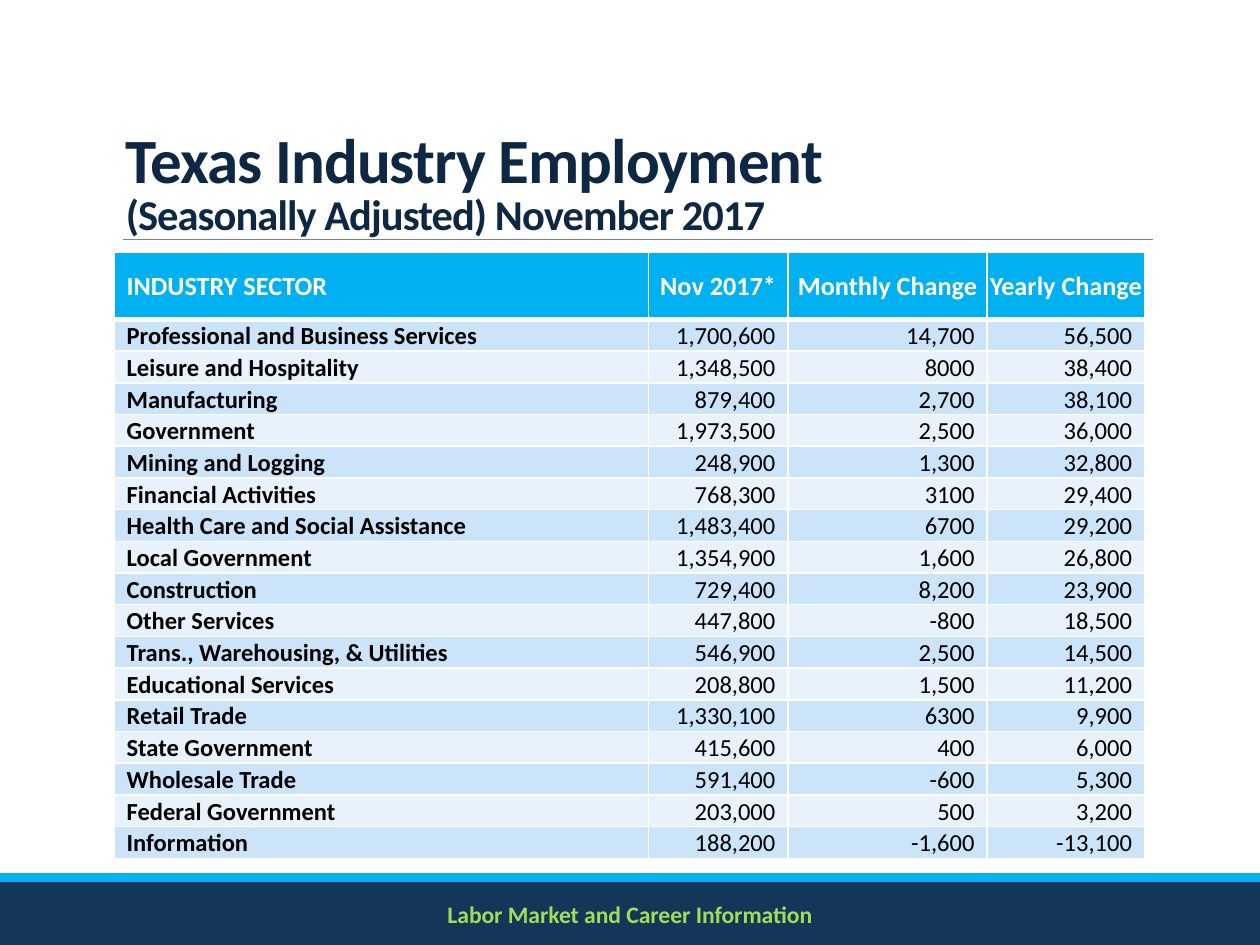
from dataclasses import dataclass
from typing import NamedTuple

from lxml.etree import SubElement
from pptx import Presentation
from pptx.dml.color import RGBColor
from pptx.enum.shapes import MSO_CONNECTOR, MSO_SHAPE
from pptx.enum.text import MSO_ANCHOR, PP_ALIGN
from pptx.oxml.ns import qn
from pptx.util import Inches, Pt


@dataclass(frozen=True)
class Theme:
    font: str = "Calibri"
    navy: str = "133659"
    cyan: str = "00B0F0"
    rule: str = "808080"
    footer: str = "9FDF58"
    title: str = "0E2843"
    white: str = "FFFFFF"
    black: str = "000000"
    bands: tuple[str, str] = ("CCE4F9", "E7F2FC")
    title_size: float = 36
    subtitle_size: float = 24.3
    header_size: float = 15
    body_size: float = 14
    footer_size: float = 13.5


class Box(NamedTuple):
    column: float
    row: float
    columns: float
    rows: float


class Sector(NamedTuple):
    name: str
    employment: str
    monthly: str
    yearly: str


class CellStyle(NamedTuple):
    size: float
    color: str
    bold: bool
    fill: str
    align: PP_ALIGN
    anchor: MSO_ANCHOR
    left: float
    right: float
    top_border: float
    bottom_border: float


THEME = Theme()
GRID_COLUMNS, GRID_ROWS = 100, 75
SLIDE_WIDTH, SLIDE_HEIGHT = Inches(10), Inches(7.5)
TABLE_BOX = Box(9.05, 20.05, 81.8, 48.1)
COLUMN_WIDTHS = (42.4, 11.1, 15.8, 12.5)
HEADER_ROWS = 5.3
HEADINGS = Sector("INDUSTRY SECTOR", "Nov 2017*", "Monthly Change", "Yearly Change")
SECTORS = (
    Sector("Professional and Business Services", "1,700,600", "14,700", "56,500"),
    Sector("Leisure and Hospitality", "1,348,500", "8000", "38,400"),
    Sector("Manufacturing", "879,400", "2,700", "38,100"),
    Sector("Government", "1,973,500", "2,500", "36,000"),
    Sector("Mining and Logging", "248,900", "1,300", "32,800"),
    Sector("Financial Activities", "768,300", "3100", "29,400"),
    Sector("Health Care and Social Assistance", "1,483,400", "6700", "29,200"),
    Sector("Local Government", "1,354,900", "1,600", "26,800"),
    Sector("Construction", "729,400", "8,200", "23,900"),
    Sector("Other Services", "447,800", "-800", "18,500"),
    Sector("Trans., Warehousing, & Utilities", "546,900", "2,500", "14,500"),
    Sector("Educational Services", "208,800", "1,500", "11,200"),
    Sector("Retail Trade", "1,330,100", "6300", "9,900"),
    Sector("State Government", "415,600", "400", "6,000"),
    Sector("Wholesale Trade", "591,400", "-600", "5,300"),
    Sector("Federal Government", "203,000", "500", "3,200"),
    Sector("Information", "188,200", "-1,600", "-13,100"),
)


def across(columns: float) -> int:
    return round(SLIDE_WIDTH * columns / GRID_COLUMNS)


def down(rows: float) -> int:
    return round(SLIDE_HEIGHT * rows / GRID_ROWS)


def place(box: Box) -> tuple[int, int, int, int]:
    return across(box.column), down(box.row), across(box.columns), down(box.rows)


def format_run(run, size: float, color: str, bold: bool = True) -> None:
    run.font.name = THEME.font
    run.font.size = Pt(size)
    run.font.bold = bold
    run.font.color.rgb = RGBColor.from_string(color)


def add_band(slide, box: Box, color: str) -> None:
    band = slide.shapes.add_shape(MSO_SHAPE.RECTANGLE, *place(box))
    band.shadow.inherit = False
    band.fill.solid()
    band.fill.fore_color.rgb = RGBColor.from_string(color)
    band.line.fill.background()


def add_rule(slide, start: float, end: float, row: float) -> None:
    rule = slide.shapes.add_connector(
        MSO_CONNECTOR.STRAIGHT, across(start), down(row), across(end), down(row))
    rule.line.color.rgb = RGBColor.from_string(THEME.rule)
    rule.line.width = Pt(0.5)
    SubElement(rule._element.spPr, qn("a:effectLst"))


def add_text(slide, box: Box, text: str, sizes: tuple[float, ...], color: str,
             align: PP_ALIGN, spacing: float = 1, tracking: float = 0) -> None:
    frame = slide.shapes.add_textbox(*place(box)).text_frame
    frame.word_wrap = True
    frame.vertical_anchor = MSO_ANCHOR.MIDDLE
    paragraph = frame.paragraphs[0]
    paragraph.text = text
    paragraph.alignment = align
    paragraph.line_spacing = spacing
    for run, size in zip(paragraph.runs, sizes):
        format_run(run, size, color)
        run._r.get_or_add_rPr().set("spc", str(round(tracking * 100)))


def add_border(cell, side: str, width: float) -> None:
    border = SubElement(cell._tc.get_or_add_tcPr(), qn(f"a:ln{side}"), w=str(Pt(width)))
    SubElement(SubElement(border, qn("a:solidFill")), qn("a:srgbClr"), val=THEME.white)


def fill_cell(cell, text: str, style: CellStyle) -> None:
    cell.text_frame.text = text
    cell.vertical_anchor = style.anchor
    cell.margin_left, cell.margin_right = across(style.left), across(style.right)
    cell.margin_top, cell.margin_bottom = down(0.1), 0
    paragraph = cell.text_frame.paragraphs[0]
    paragraph.alignment = style.align
    format_run(paragraph.runs[0], style.size, style.color, style.bold)
    for side, width in zip("LRTB", (1, 1, style.top_border, style.bottom_border)):
        add_border(cell, side, width)
    cell.fill.solid()
    cell.fill.fore_color.rgb = RGBColor.from_string(style.fill)


def cell_style(row: int, column: int) -> CellStyle:
    is_name = column == 0
    left = 1 if is_name else 0.1
    if row == 0:
        align = PP_ALIGN.LEFT if is_name else PP_ALIGN.CENTER
        return CellStyle(THEME.header_size, THEME.white, True, THEME.cyan, align,
                         MSO_ANCHOR.MIDDLE, left, 0.1, 1, 3)
    align = PP_ALIGN.LEFT if is_name else PP_ALIGN.RIGHT
    return CellStyle(THEME.body_size, THEME.black, is_name, THEME.bands[(row - 1) % 2],
                     align, MSO_ANCHOR.BOTTOM, left, 0.1 if is_name else 1,
                     3 if row == 1 else 1, 1)


def add_employment_table(slide) -> None:
    entries = (HEADINGS, *SECTORS)
    table = slide.shapes.add_table(
        len(entries), len(COLUMN_WIDTHS), *place(TABLE_BOX)).table
    table.horz_banding = False
    for column, width in zip(table.columns, COLUMN_WIDTHS):
        column.width = across(width)
    sector_rows = (TABLE_BOX.rows - HEADER_ROWS) / len(SECTORS)
    for row, entry in enumerate(entries):
        table.rows[row].height = down(sector_rows if row else HEADER_ROWS)
        for column, text in enumerate(entry):
            fill_cell(table.cell(row, column), text, cell_style(row, column))


def main() -> None:
    """Build the Texas industry employment slide."""
    deck = Presentation()
    deck.slide_width, deck.slide_height = SLIDE_WIDTH, SLIDE_HEIGHT
    slide = deck.slides.add_slide(deck.slide_layouts[6])
    add_band(slide, Box(0, 70, 100, 5), THEME.navy)
    add_band(slide, Box(0, 69.3, 100, 0.7), THEME.cyan)
    add_rule(slide, 9.8, 91.5, 19)
    add_text(slide, Box(0, 70.8, 100, 3.5), "Labor Market and Career Information",
             (THEME.footer_size,), THEME.footer, PP_ALIGN.CENTER)
    add_text(slide, Box(9, 10.3, 90.3, 8.9),
             "Texas Industry Employment\v(Seasonally Adjusted) November 2017",
             (THEME.title_size, THEME.subtitle_size), THEME.title, PP_ALIGN.LEFT,
             spacing=0.85, tracking=-0.5)
    add_employment_table(slide)
    deck.save("out.pptx")


if __name__ == "__main__":
    main()
